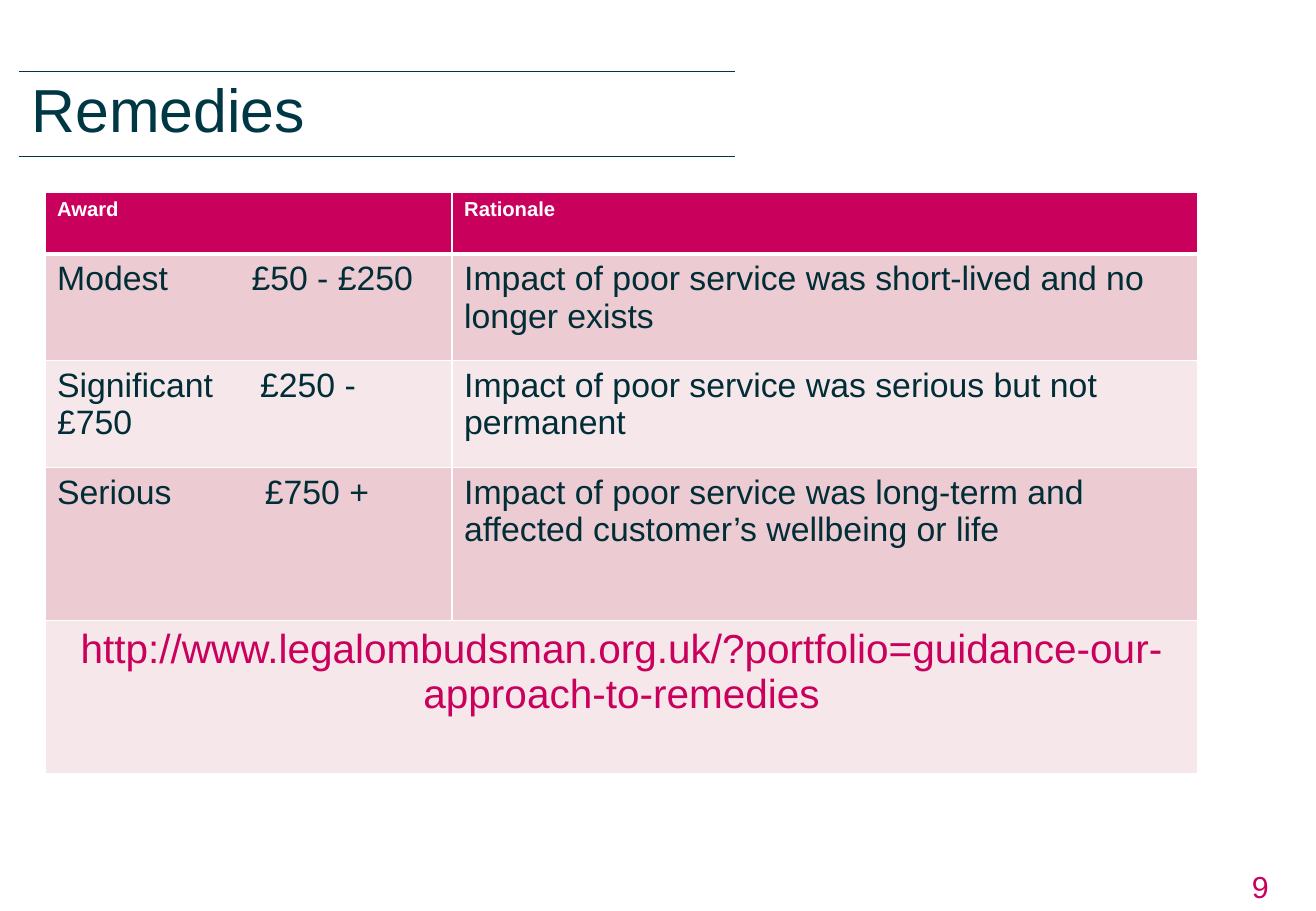
"""Build the Remedies slide with its table of award levels."""
from lxml import etree
from pptx import Presentation
from pptx.dml.color import RGBColor
from pptx.enum.text import PP_ALIGN
from pptx.oxml.ns import qn
from pptx.util import Inches, Pt

LEFT, CENTER, RIGHT = PP_ALIGN.LEFT, PP_ALIGN.CENTER, PP_ALIGN.RIGHT
TEAL, INK, PINK, WHITE = "003745", "002D36", "CA005D", "FFFFFF"
BANDS = ("ECCCD2", "F6E7EA")
AWARDS = [
    ("Modest\t£50 - £250", 1.6,
     "Impact of poor service was short-lived and no longer exists"),
    ("Significant\t£250 - £750", 1.67,
     "Impact of poor service was serious but not permanent"),
    ("Serious\t£750 +", 1.71,
     "Impact of poor service was long-term and affected customer’s wellbeing or life"),
]
GUIDANCE = "http://www.legalombudsman.org.uk/?portfolio=guidance-our-approach-to-remedies"


def rgb(color):
    return RGBColor.from_string(color)


class Deck:
    def __init__(self, width, height, font):
        self.prs = Presentation()
        self.prs.slide_width, self.prs.slide_height = Inches(width), Inches(height)
        self.s = self.prs.slides.add_slide(self.prs.slide_layouts[6])
        self.font = font

    def set_text(self, tf, text, size, color, align=LEFT, bold=False, tab=None):
        tf.word_wrap = True
        p = tf.paragraphs[0]
        p.text = text
        p.alignment = align
        if tab:
            tabs = etree.SubElement(p._p.get_or_add_pPr(), qn("a:tabLst"))
            etree.SubElement(tabs, qn("a:tab"), pos=str(Inches(tab)), algn="l")
        p.font.name, p.font.size, p.font.bold = self.font, Pt(size), bold
        p.font.color.rgb = rgb(color)

    def text(self, x, y, w, h, text, size, color, align=LEFT):
        sp = self.s.shapes.add_textbox(Inches(x), Inches(y), Inches(w), Inches(h))
        self.set_text(sp.text_frame, text, size, color, align)

    def table(self, x, y, cols, rows):
        frame = self.s.shapes.add_table(len(rows), len(cols), Inches(x), Inches(y),
                                        Inches(sum(cols)), Inches(sum(rows)))
        table = frame.table
        table.first_row = table.horz_banding = False
        for column, width in zip(table.columns, cols):
            column.width = Inches(width)
        for row, height in zip(table.rows, rows):
            row.height = Inches(height)
        return table

    def cell(self, cell, fill, **borders):
        tcPr = cell._tc.get_or_add_tcPr()
        for side in "LRTB":
            color, width = borders.get(side, (WHITE, 1))
            ln = etree.SubElement(tcPr, qn("a:ln" + side), w=str(Pt(width)))
            solid = etree.SubElement(ln, qn("a:solidFill"))
            etree.SubElement(solid, qn("a:srgbClr"), val=color)
        cell.fill.solid()
        cell.fill.fore_color.rgb = rgb(fill)


def main():
    deck = Deck(10.83, 7.5, "Arial")
    deck.text(7.84, 7.1, 2.7, 0.37, "9", 18, PINK, RIGHT)

    rule = (TEAL, 1)
    title = deck.table(0.16, 0.16, [5.88], [0.43, 0.7])
    deck.cell(title.cell(0, 0), WHITE, B=rule)
    deck.cell(title.cell(1, 0), WHITE, T=rule, B=rule)
    deck.set_text(title.cell(1, 0).text_frame, "Remedies", 36, TEAL)

    awards = deck.table(0.37, 1.58, [3.35, 6.14], [0.51, 0.88, 0.88, 1.26, 1.26])
    thick = (WHITE, 3)
    for col, heading in enumerate(("Award", "Rationale")):
        deck.cell(awards.cell(0, col), PINK, B=thick)
        deck.set_text(awards.cell(0, col).text_frame, heading, 12, WHITE, bold=True)
        for row in range(1, 5):
            edges = {"T": thick} if row == 1 else {}
            deck.cell(awards.cell(row, col), BANDS[(row - 1) % 2], **edges)
    for row, (award, tab, rationale) in enumerate(AWARDS, 1):
        deck.set_text(awards.cell(row, 0).text_frame, award, 20, INK, tab=tab)
        deck.set_text(awards.cell(row, 1).text_frame, rationale, 20, INK)
    awards.cell(4, 0).merge(awards.cell(4, 1))
    deck.set_text(awards.cell(4, 0).text_frame, GUIDANCE, 24, PINK, CENTER)

    deck.prs.save("out.pptx")


if __name__ == "__main__":
    main()
